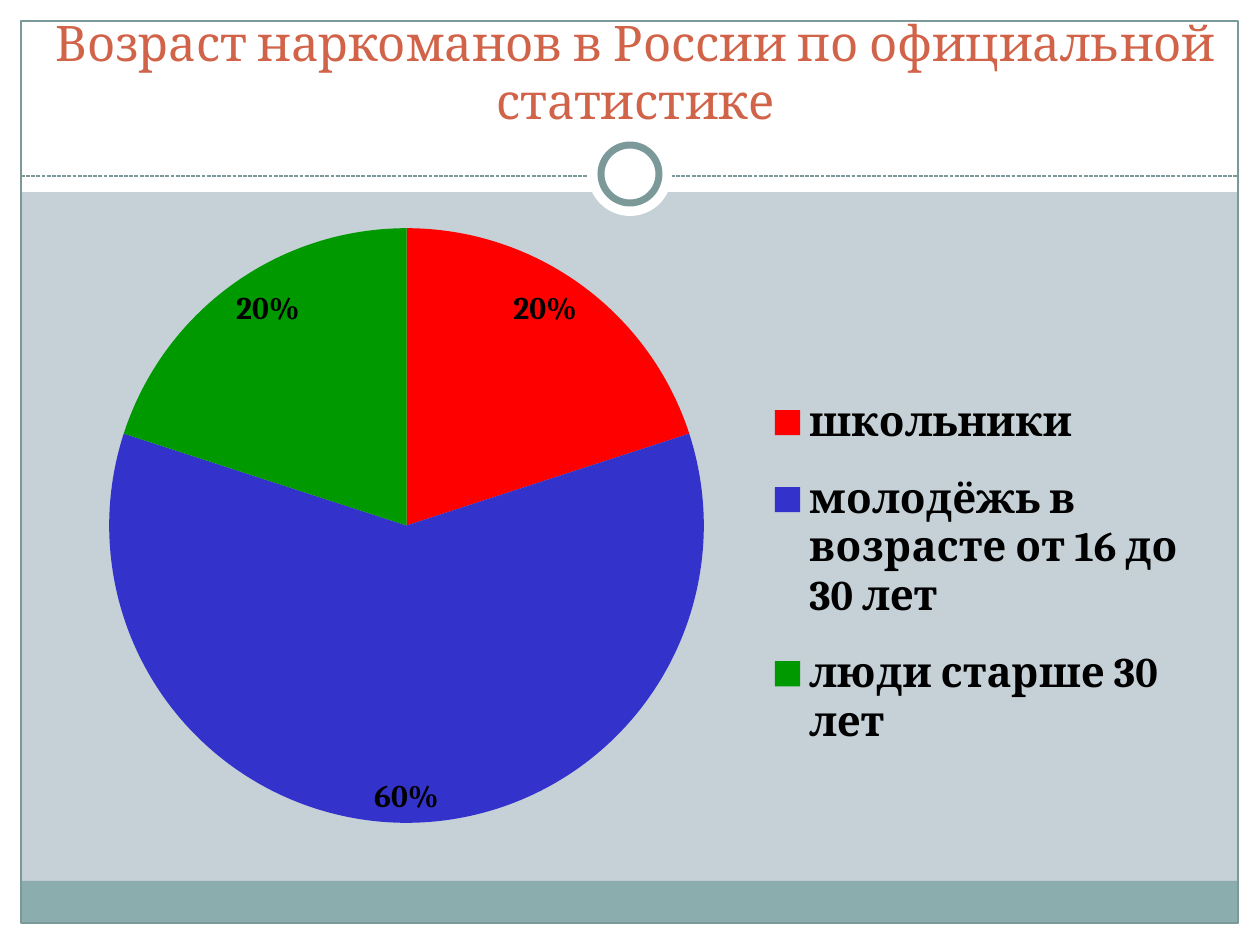
import pptx
import pptx.chart.data
import pptx.dml.color
import pptx.enum.chart
import pptx.enum.dml
import pptx.enum.shapes
import pptx.enum.text
import pptx.oxml
import pptx.oxml.ns
import pptx.util

EMU_PER_PX = 914400 // 126
SLIDE_SIZE = (1260, 945)
FONT = "Cambria"
WHITE, TEAL, LINE, BACKGROUND = "FFFFFF", "8CADAE", "7C999A", "C5D1D7"
TITLE = "Возраст наркоманов в России по официальной статистике"
TITLE_BOX = (25, 31, 1221, 105)
CHART_BOX = (42, 210, 1172, 630)
PIE_BOX = (109, 228, 595, 595)
LEGEND_BOX = (757, 370, 440, 405)
AGE_GROUPS = [
    ("школьники", 0.2, "FF0000"),
    ("молодёжь в возрасте от 16 до 30 лет", 0.6, "3333CC"),
    ("люди старше 30 лет", 0.2, "009900"),
]
# kind, box, fill, line width in points
FRAME = [
    ("RECTANGLE", (0, 924, 1260, 21), WHITE, 0),
    ("RECTANGLE", (0, 0, 1260, 192), WHITE, 0),
    ("RECTANGLE", (0, 0, 21, 945), WHITE, 0),
    ("RECTANGLE", (1239, 0, 21, 945), WHITE, 0),
    ("RECTANGLE", (21, 881, 1217, 43), TEAL, 0),
    ("RECTANGLE", (21, 21, 1217, 902), None, 0.75),
]
RING = [
    ("OVAL", (588, 132, 84, 84), WHITE, 0),
    ("OVAL", (601, 145, 58, 58), WHITE, 4),
]
DIVIDER = (21, 176, 1239, 176)


def px(*lengths):
    return [length * EMU_PER_PX for length in lengths]


def color(value):
    return pptx.dml.color.RGBColor.from_string(value)


def paint(fill, value):
    fill.solid()
    fill.fore_color.rgb = color(value)


def style_font(font, size, value, bold=False):
    font.name = FONT
    font.size = pptx.util.Pt(size)
    font.bold = bold
    font.color.rgb = color(value)


def add_shapes(slide, items):
    for kind, box, fill, line_width in items:
        shape_type = getattr(pptx.enum.shapes.MSO_SHAPE, kind)
        shape = slide.shapes.add_shape(shape_type, *px(*box))
        shape.shadow.inherit = False
        if fill:
            paint(shape.fill, fill)
        else:
            shape.fill.background()
        if line_width:
            shape.line.color.rgb = color(LINE)
            shape.line.width = pptx.util.Pt(line_width)
        else:
            shape.line.fill.background()


def add_divider(slide):
    divider = slide.shapes.add_connector(
        pptx.enum.shapes.MSO_CONNECTOR.STRAIGHT, *px(*DIVIDER))
    divider.line.color.rgb = color(LINE)
    divider.line.width = pptx.util.Pt(0.75)
    divider.line.dash_style = pptx.enum.dml.MSO_LINE.SQUARE_DOT
    properties = divider.element.find(pptx.oxml.ns.qn("p:spPr"))
    properties.append(pptx.oxml.parse_xml(
        f'<a:effectLst {pptx.oxml.ns.nsdecls("a")}/>'))


def add_title(slide):
    frame = slide.shapes.add_textbox(*px(*TITLE_BOX)).text_frame
    frame.word_wrap = True
    frame.vertical_anchor = pptx.enum.text.MSO_ANCHOR.BOTTOM
    paragraph = frame.paragraphs[0]
    paragraph.text = TITLE
    paragraph.alignment = pptx.enum.text.PP_ALIGN.CENTER
    style_font(paragraph.font, 28, "D16349")


def place(parent, box, target=""):
    """Fix a chart part's place, as fractions of the chart box."""
    left, top, width, height = CHART_BOX
    fractions = {
        "x": (box[0] - left) / width, "y": (box[1] - top) / height,
        "w": box[2] / width, "h": box[3] / height,
    }
    modes = '<c:xMode val="edge"/><c:yMode val="edge"/>'
    values = "".join(f'<c:{key} val="{value:.3f}"/>' for key, value in fractions.items())
    layout = pptx.oxml.parse_xml(
        f'<c:layout {pptx.oxml.ns.nsdecls("c")}><c:manualLayout>'
        f'{target}{modes}{values}</c:manualLayout></c:layout>')
    name = pptx.oxml.ns.qn("c:layout")
    for old in parent.findall(name):
        parent.remove(old)
    position = parent.find(pptx.oxml.ns.qn("c:legendPos"))
    parent.insert(0 if position is None else parent.index(position) + 1, layout)


def add_pie(slide):
    names, shares, colors = zip(*AGE_GROUPS)
    data = pptx.chart.data.CategoryChartData(number_format="0%")
    data.categories = names
    data.add_series("Series 1", shares)
    chart = slide.shapes.add_chart(
        pptx.enum.chart.XL_CHART_TYPE.PIE, *px(*CHART_BOX), data).chart
    chart.has_title = False
    style_font(chart.font, 10, "000000")

    plot = chart.plots[0]
    plot.vary_by_categories = True
    for index, value in enumerate(colors):
        paint(plot.series[0].points[index].format.fill, value)
    plot.has_data_labels = True
    labels = plot.data_labels
    labels.show_value = True
    labels.show_percentage = False
    labels.number_format = "0%"
    labels.number_format_is_linked = False
    labels.position = pptx.enum.chart.XL_LABEL_POSITION.INSIDE_END
    style_font(labels.font, 18, "000000", bold=True)

    chart.has_legend = True
    legend = chart.legend
    legend.position = pptx.enum.chart.XL_LEGEND_POSITION.RIGHT
    legend.include_in_layout = False
    style_font(legend.font, 24, "000000", bold=True)

    chart_xml = chart.element
    place(chart_xml.find(".//" + pptx.oxml.ns.qn("c:plotArea")), PIE_BOX,
          '<c:layoutTarget val="inner"/>')
    place(chart_xml.find(".//" + pptx.oxml.ns.qn("c:legend")), LEGEND_BOX)


def main():
    presentation = pptx.Presentation()
    presentation.slide_width, presentation.slide_height = px(*SLIDE_SIZE)
    slide = presentation.slides.add_slide(presentation.slide_layouts[6])
    paint(slide.background.fill, BACKGROUND)
    add_shapes(slide, FRAME)
    add_divider(slide)
    add_shapes(slide, RING)
    add_title(slide)
    add_pie(slide)
    presentation.save("out.pptx")


if __name__ == "__main__":
    main()
